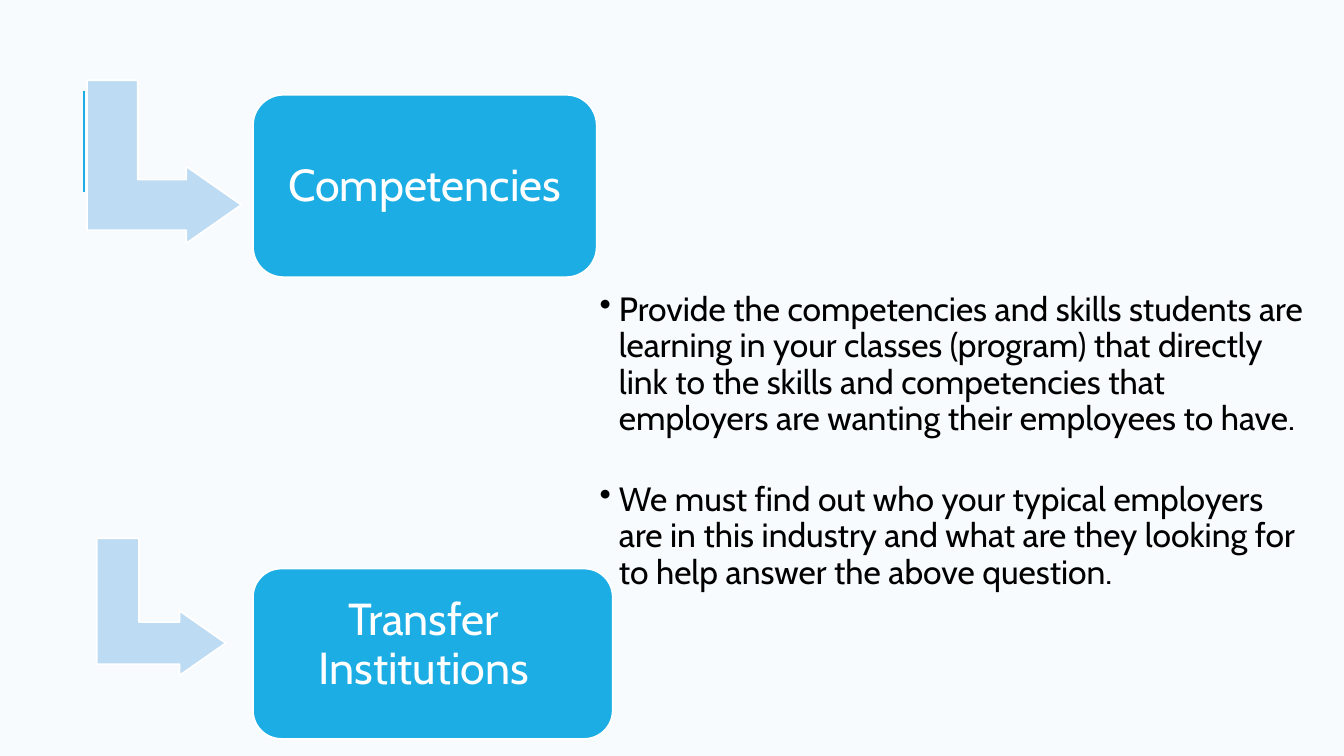
"""Build the slide on competencies and transfer institutions."""
from dataclasses import dataclass

from lxml.etree import SubElement
from pptx import Presentation
from pptx.dml.color import RGBColor
from pptx.enum.shapes import MSO_CONNECTOR, MSO_SHAPE
from pptx.enum.text import MSO_ANCHOR, PP_ALIGN
from pptx.oxml.ns import qn
from pptx.util import Pt

STEPS = [
    {"title": "Competencies", "arrow": (59, 60.5, 116.6, 110.2),
     "card": (180.7, 67.7, 245.5, 130.3), "label": (187.2, 74.2, 232.6, 118.1)},
    {"title": "Transfer Institutions", "arrow": (66.2, 387.4, 97.9, 92.2),
     "card": (180.7, 406.1, 257, 121.7), "label": (186.5, 406.1, 232.6, 110.2)},
]
POINTS = [
    "Provide the competencies and skills students are learning in your classes "
    "(program) that directly link to the skills and competencies that employers "
    "are wanting their employees to have.",
    "We must find out who your typical employers are in this industry and what "
    "are they looking for to help answer the above question.",
]
POINTS_BOX = (423.4, 192.2, 514.1, 247)
RULE = (59.8, 64.8, 59.8, 136.8)


@dataclass(frozen=True)
class Theme:
    font: str = "Cabin"
    back: str = "F7FBFD"
    blue: str = "1CADE4"
    pale: str = "BDDBF2"
    white: str = "FFFFFF"
    black: str = "000000"
    title: int = 32
    body: int = 24


THEME = Theme()


def color(code):
    return RGBColor.from_string(code)


def pts(nums):
    return [Pt(n) for n in nums]


def add_block(slide, kind, box, fill, adjust):
    block = slide.shapes.add_shape(kind, *pts(box))
    block.shadow.inherit = False
    block.fill.solid()
    block.fill.fore_color.rgb = color(fill)
    block.line.color.rgb = color(THEME.white)
    block.line.width = Pt(1.25)
    for i, value in enumerate(adjust):
        block.adjustments[i] = value
    return block


def add_text(slide, box, lines, size, ink, inset):
    frame = slide.shapes.add_textbox(*pts(box)).text_frame
    frame.word_wrap = True
    frame.vertical_anchor = MSO_ANCHOR.MIDDLE
    frame.margin_left = frame.margin_right = Pt(inset)
    frame.margin_top = frame.margin_bottom = Pt(inset)
    for i, line in enumerate(lines):
        para = frame.add_paragraph() if i else frame.paragraphs[0]
        para.line_spacing = 0.9
        run = para.add_run()
        run.text = line
        run.font.name = THEME.font
        run.font.size = Pt(size)
        run.font.color.rgb = color(ink)
    return frame.paragraphs


def add_bullet(para, indent):
    props = para._p.get_or_add_pPr()
    props.set("marL", str(Pt(indent)))
    props.set("indent", str(-Pt(indent)))
    SubElement(props, qn("a:buChar")).set("char", "•")


def add_rule(slide):
    rule = slide.shapes.add_connector(MSO_CONNECTOR.STRAIGHT, *pts(RULE))
    rule.line.color.rgb = color(THEME.blue)
    rule.line.width = Pt(1.5)
    SubElement(rule._element.spPr, qn("a:effectLst"))


def add_step(slide, step):
    arrow = add_block(slide, MSO_SHAPE.BENT_UP_ARROW, step["arrow"],
                      THEME.pale, (0.328, 0.25, 0.358))
    arrow.rotation = 90
    add_block(slide, MSO_SHAPE.ROUNDED_RECTANGLE, step["card"], THEME.blue, (0.167,))
    label = add_text(slide, step["label"], [step["title"]], THEME.title, THEME.white, 7.2)
    label[0].alignment = PP_ALIGN.CENTER


def add_points(slide):
    paras = add_text(slide, POINTS_BOX, POINTS, THEME.body, THEME.black, 5)
    for para in paras:
        add_bullet(para, 13.7)
    for para in paras[1:]:
        para.space_before = Pt(32)


def main():
    deck = Presentation()
    deck.slide_width, deck.slide_height = Pt(960), Pt(540)
    slide = deck.slides.add_slide(deck.slide_layouts[6])
    slide.background.fill.solid()
    slide.background.fill.fore_color.rgb = color(THEME.back)
    add_rule(slide)
    for step in STEPS:
        add_step(slide, step)
    add_points(slide)
    deck.save("out.pptx")


if __name__ == "__main__":
    main()
